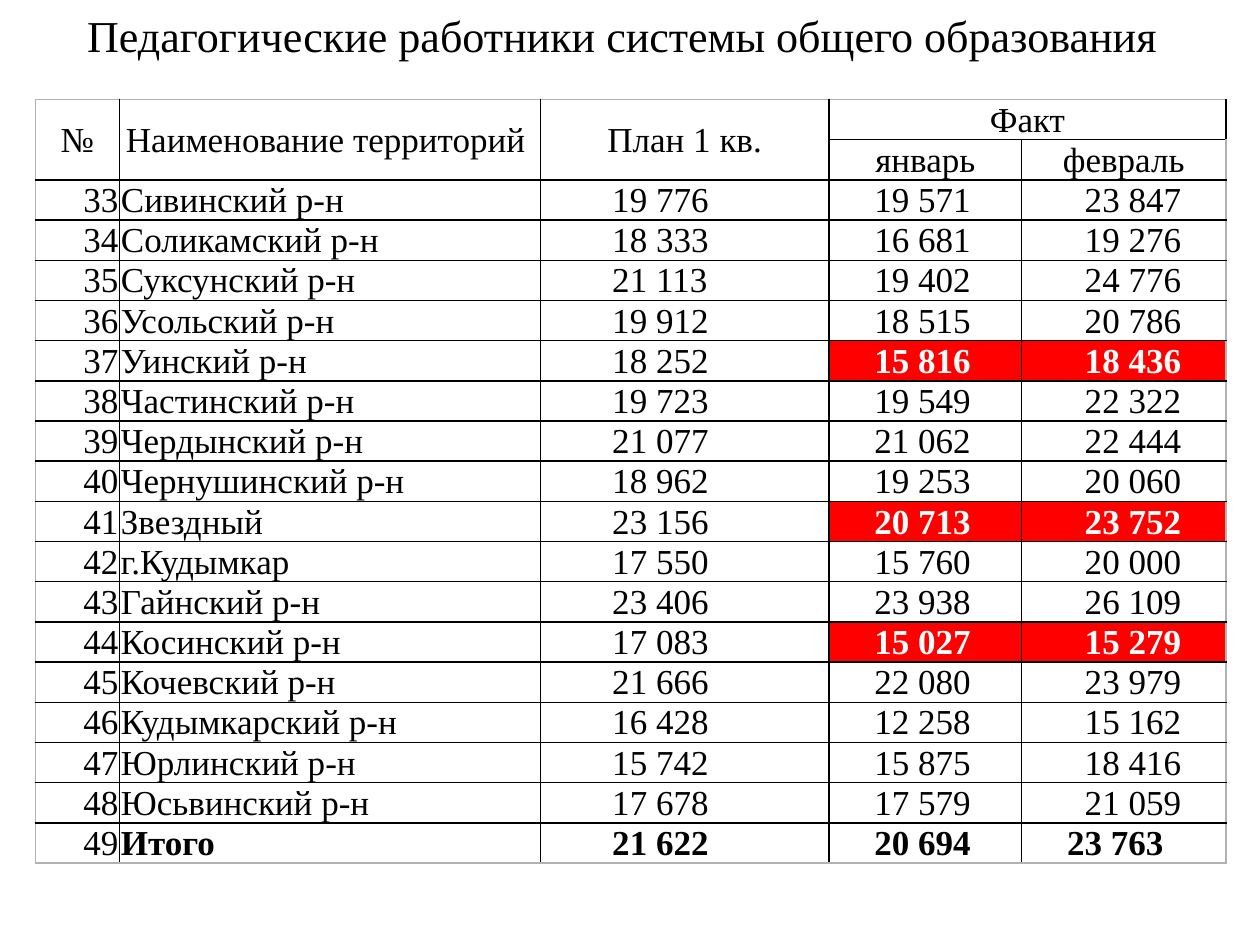
from dataclasses import dataclass

from lxml.etree import SubElement
from pptx import Presentation
from pptx.dml.color import RGBColor
from pptx.enum.text import MSO_ANCHOR as Anchor, PP_ALIGN as Align
from pptx.oxml.ns import qn
from pptx.util import Inches, Pt


@dataclass(frozen=True)
class Theme:
    font: str = "Times New Roman"
    title_size: float = 25.2
    table_size: float = 20
    ink: str = "000000"
    paper: str = "FFFFFF"
    alert: str = "FF0000"
    frame: str = "B2B2B2"


THEME = Theme()
TITLE = "Педагогические работники системы общего образования"
# text, row, column, last row, last column
HEADINGS = [
    ("№", 0, 0, 1, 0),
    ("Наименование территорий", 0, 1, 1, 1),
    ("План 1 кв.", 0, 2, 1, 2),
    ("Факт", 0, 3, 0, 4),
    ("январь", 1, 3, 1, 3),
    ("февраль", 1, 4, 1, 4),
]
FIRST_NUMBER = 33
# territory, plan, January, February
TERRITORIES = [
    ("Сивинский р-н", 19776, 19571, 23847),
    ("Соликамский р-н", 18333, 16681, 19276),
    ("Суксунский р-н", 21113, 19402, 24776),
    ("Усольский р-н", 19912, 18515, 20786),
    ("Уинский р-н", 18252, 15816, 18436),
    ("Частинский р-н", 19723, 19549, 22322),
    ("Чердынский р-н", 21077, 21062, 22444),
    ("Чернушинский р-н", 18962, 19253, 20060),
    ("Звездный", 23156, 20713, 23752),
    ("г.Кудымкар", 17550, 15760, 20000),
    ("Гайнский р-н", 23406, 23938, 26109),
    ("Косинский р-н", 17083, 15027, 15279),
    ("Кочевский р-н", 21666, 22080, 23979),
    ("Кудымкарский р-н", 16428, 12258, 15162),
    ("Юрлинский р-н", 15742, 15875, 18416),
    ("Юсьвинский р-н", 17678, 17579, 21059),
    ("Итого", 21622, 20694, 23763),
]
ALERTS = {"Уинский р-н", "Звездный", "Косинский р-н"}
TOTAL = "Итого"

COLUMNS = [0.67, 3.34, 2.29, 1.53, 1.62]
INDENTS = [0.01, 0.01, 0.57, 0.36, 0.5]
TOTAL_INDENTS = INDENTS[:4] + [0.36]
HEADER_ROWS = 2
ROWS = HEADER_ROWS + len(TERRITORIES)
TABLE_LEFT, TABLE_TOP, TABLE_HEIGHT = 0.28, 0.79, 6.06


def style_text(frame, size, color=THEME.ink, bold=False, align=Align.LEFT):
    paragraph = frame.paragraphs[0]
    paragraph.alignment = align
    for run in paragraph.runs:
        run.font.name = THEME.font
        run.font.size = Pt(size)
        run.font.bold = bold
        run.font.color.rgb = RGBColor.from_string(color)


def write_cell(cell, text, align, anchor, indent=0.01, color=THEME.ink, bold=False):
    cell.text_frame.text = text
    cell.vertical_anchor = anchor
    cell.margin_left = Inches(indent)
    style_text(cell.text_frame, THEME.table_size, color, bold, align)


def prepare_cell(cell, row, column):
    """Set margins, a grey outer or black inner border on each side, and the fill."""
    cell.margin_left = cell.margin_right = cell.margin_top = Inches(0.01)
    cell.margin_bottom = 0
    outer_sides = {
        "a:lnL": column == 0,
        "a:lnR": column == len(COLUMNS) - 1,
        "a:lnT": row == 0,
        "a:lnB": row == ROWS - 1,
    }
    properties = cell._tc.get_or_add_tcPr()
    for side, is_outer in outer_sides.items():
        line = SubElement(properties, qn(side), w=str(Pt(1)))
        solid = SubElement(line, qn("a:solidFill"))
        SubElement(solid, qn("a:srgbClr"), val=THEME.frame if is_outer else THEME.ink)
    fill_cell(cell, THEME.paper)


def fill_cell(cell, color):
    cell.fill.solid()
    cell.fill.fore_color.rgb = RGBColor.from_string(color)


def add_title(slide):
    title = slide.shapes.title
    title.left, title.top, title.width, title.height = map(Inches, (0.04, 0.05, 9.8, 0.46))
    title.text_frame.text = TITLE
    title.text_frame.vertical_anchor = Anchor.MIDDLE
    style_text(title.text_frame, THEME.title_size, align=Align.CENTER)


def add_territory_table(slide):
    area = map(Inches, (TABLE_LEFT, TABLE_TOP, sum(COLUMNS), TABLE_HEIGHT))
    table = slide.shapes.add_table(ROWS, len(COLUMNS), *area).table
    table.first_row = table.horz_banding = False
    for column, width in zip(table.columns, COLUMNS):
        column.width = Inches(width)
    for row in range(ROWS):
        for column in range(len(COLUMNS)):
            prepare_cell(table.cell(row, column), row, column)

    for text, row, column, last_row, last_column in HEADINGS:
        heading = table.cell(row, column)
        if (row, column) != (last_row, last_column):
            heading.merge(table.cell(last_row, last_column))
        write_cell(heading, text, Align.CENTER, Anchor.MIDDLE)
    table.cell(0, 1).margin_right = Inches(0.08)

    for index, (territory, *amounts) in enumerate(TERRITORIES):
        is_total = territory == TOTAL
        indents = TOTAL_INDENTS if is_total else INDENTS
        values = [str(FIRST_NUMBER + index), territory]
        values += [f"{amount:,}".replace(",", " ") for amount in amounts]
        for column, value in enumerate(values):
            cell = table.cell(HEADER_ROWS + index, column)
            is_alert = territory in ALERTS and column >= 3
            if is_alert:
                fill_cell(cell, THEME.alert)
            write_cell(
                cell, value, Align.LEFT if column else Align.RIGHT, Anchor.BOTTOM,
                indents[column], THEME.paper if is_alert else THEME.ink,
                is_alert or (is_total and column > 0),
            )


def main():
    presentation = Presentation()
    presentation.slide_width, presentation.slide_height = Inches(10), Inches(7.5)
    slide = presentation.slides.add_slide(presentation.slide_layouts[5])
    add_title(slide)
    add_territory_table(slide)
    presentation.save("out.pptx")


if __name__ == "__main__":
    main()
